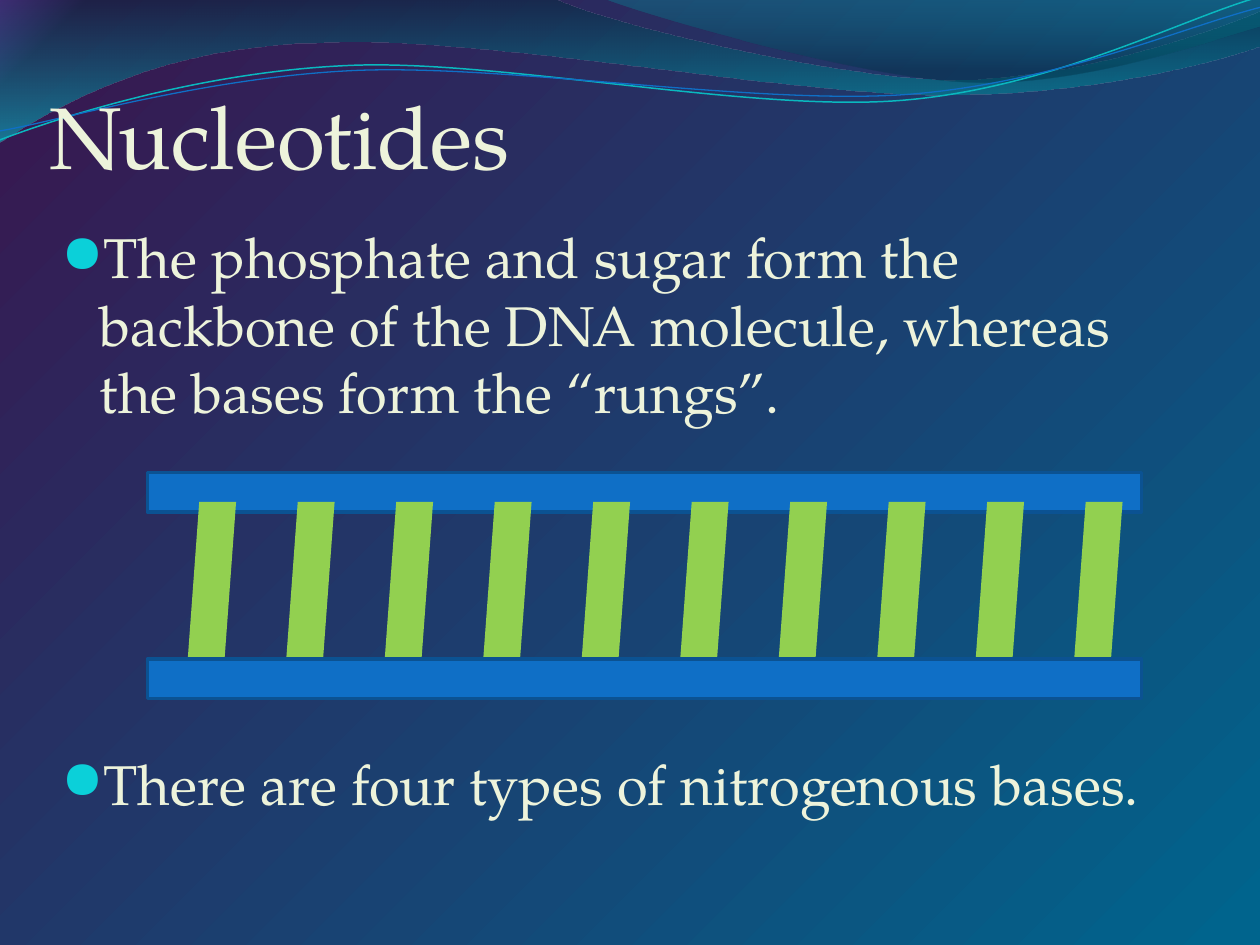
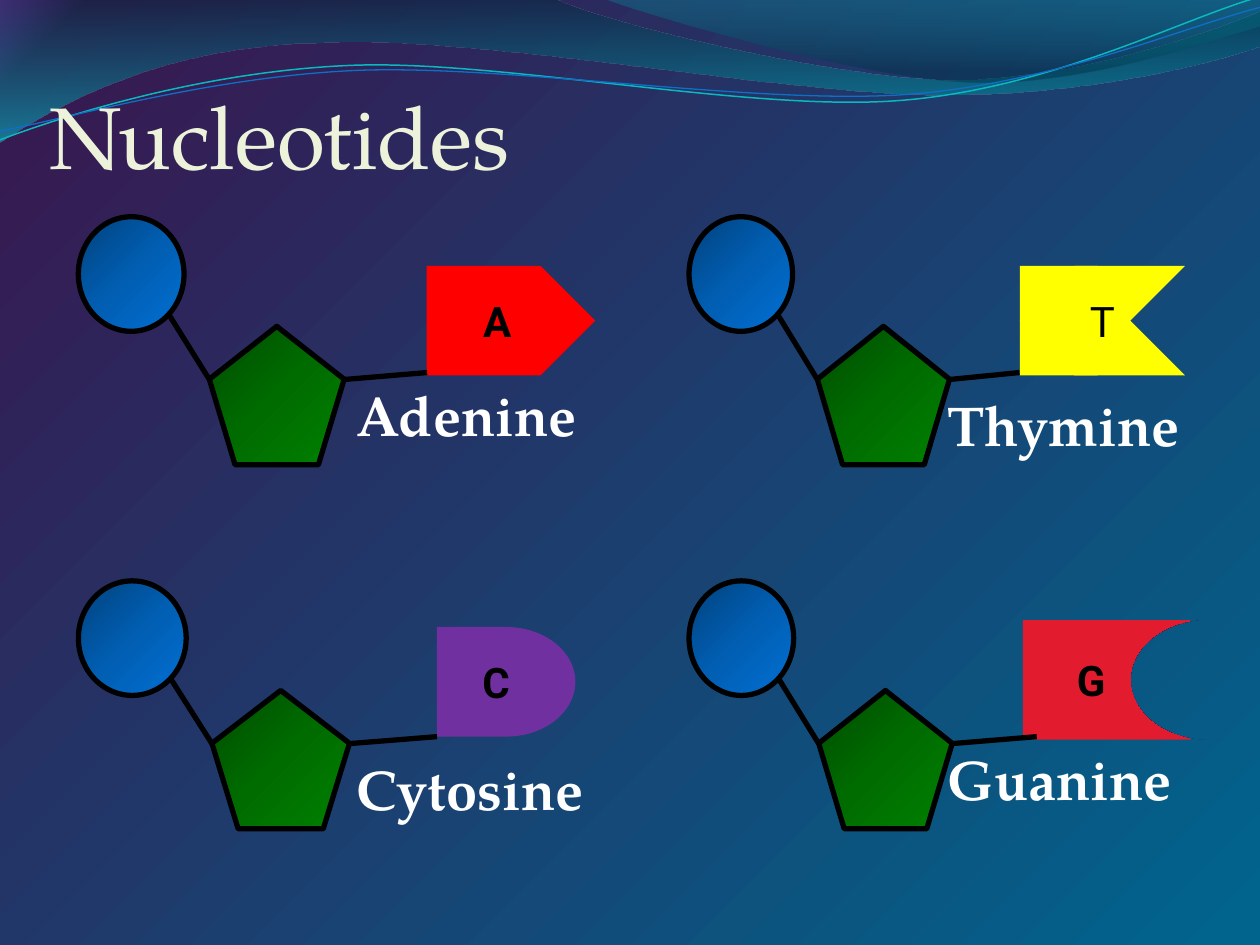
from dataclasses import dataclass

from lxml.etree import SubElement
from pptx import Presentation
from pptx.dml.color import RGBColor
from pptx.enum.shapes import MSO_CONNECTOR as Connector, MSO_SHAPE as Preset
from pptx.enum.text import MSO_ANCHOR as Anchor, PP_ALIGN as Align
from pptx.oxml.ns import qn
from pptx.util import Cm, Pt


@dataclass(frozen=True)
class Theme:
    serif: str = "TeX Gyre Pagella"
    sans: str = "Roboto"
    symbol: str = "OpenSymbol"
    title_size: int = 50
    text_size: int = 32
    letter_size: int = 24
    outline: int = 3
    cream: str = "EDF3DB"
    white: str = "FFFFFF"
    black: str = "000000"
    bullet: str = "0BD0D9"
    rail: str = "0F6FC6"
    rail_edge: str = "0B5292"
    rung: str = "92D050"
    background: tuple = ((0, "7030A0"), (4, "381850"), (99, "00648D"))
    phosphate: tuple = ((0, "01427D"), (50, "015EB2"), (100, "0170D4"))
    sugar: tuple = ((0, "004C00"), (50, "006C00"), (100, "008000"))


THEME = Theme()

TITLE = "Nucleotides"
TITLE_BOX = (0.99, 0.6, 22.86, 3.18)
BODY_BOX = (0.99, 4.37, 23.42, 13.69)
BODY = [
    ("The phosphate and sugar form the backbone of the DNA molecule, "
     "whereas the bases form the “rungs”.", 6.4),
    ("There are four types of nitrogenous bases.", 185.8),
]

BANDS = [
    ((0, -0.03),
     [(11.18, -0.03), (12.09, 0.43, 16.87, 1.6, 19.25, 1.6),
      (21.67, 1.6, 24.33, 0.66, 25.4, 0.23), (25.43, 0.91),
      (24.97, 1.12, 22.1, 1.93, 18.95, 1.91),
      (15.8, 1.91, 9.7, 0.71, 6.53, 0.86),
      (3.28, 0.89, 1.17, 2.11, -0.03, 2.87)],
     [(0, "002B3C", 45), (100, "00C6CF", 55)]),
    ((12.17, -0.03),
     [(12.93, 0.28, 17.32, 1.57, 19.53, 1.65),
      (21.74, 1.75, 24.41, 0.81, 25.4, 0.53), (25.4, 0)],
     [(0, "00A1A9", 30), (80, "003347", 45)]),
]
STRANDS = [
    ((0, 2.82),
     [(1.22, 2.36, 4.01, 1.45, 7.04, 1.32),
      (10.03, 1.19, 15.06, 2.26, 18.11, 2.03),
      (21.16, 1.8, 23.83, 0.38, 25.35, -0.05)], "0AB8BF", 0.85),
    ((0, 2.64),
     [(1.19, 2.44, 4.17, 1.55, 7.19, 1.42),
      (10.24, 1.3, 15.16, 2.11, 18.21, 1.91),
      (21.23, 1.7, 23.9, 0.53, 25.4, 0.15)], "0F6FC6", 0.75),
]

RAIL_LEFT, RAIL_WIDTH, RAIL_HEIGHT = 2.97, 20.04, 0.79
RAIL_TOPS = (9.53, 13.29)
RUNG_BOX = (3.77, 10.12, 0.99, 3.38)
RUNG_COUNT, RUNG_SPAN = 10, 17.87

COLUMNS, ROWS = (1.58, 13.89), (4.37, 11.71)
LABEL_LEFTS = (6.93, 18.85)
NUCLEOTIDES = [
    dict(name="Adenine", column=0, row=0, stretch=1, bond_end=8.61, label_top=7.54,
         preset=Preset.PENTAGON, base=(8.6, 5.36, 3.4, 2.21), color="FF0000"),
    dict(name="Thymine", column=1, row=0, stretch=0.98, bond_end=20.55, label_top=7.75,
         preset=Preset.CHEVRON, base=(20.56, 5.36, 3.33, 2.21), color="FFFF00",
         backing=(20.56, 5.36, 1.57, 2.21), bold=False),
    dict(name="Cytosine", column=0, row=1, stretch=1.02, bond_end=8.81, label_top=15.09,
         preset=Preset.FLOWCHART_DELAY, base=(8.81, 12.64, 2.79, 2.21), color="7030A0"),
    dict(name="Guanine", column=1, row=1, stretch=0.99, bond_end=20.9, label_top=14.88,
         preset=Preset.RECTANGLE, base=(20.62, 12.5, 3.38, 2.41), color="E31B2E",
         cutout=(22.81, 12.5, 3.18, 2.41), margin_right=0.88),
]


def assign(target, **values):
    for name, value in values.items():
        setattr(target, name, value)


def lengths(values):
    return [Cm(value) for value in values]


def fill_gradient(fill, element, stops, angle):
    fill.gradient()
    gradient = element.find(".//" + qn("a:gradFill"))
    gradient.find(qn("a:lin")).set("ang", str(angle * 60000))
    stop_list = gradient.find(qn("a:gsLst"))
    stop_list.clear()
    for position, color, *opacity in stops:
        stop = SubElement(stop_list, qn("a:gs"), pos=str(position * 1000))
        tint = SubElement(stop, qn("a:srgbClr"), val=color)
        for percent in opacity:
            SubElement(tint, qn("a:alpha"), val=str(percent * 1000))


def paint(shape, fill=None, line=None, width=0, angle=45):
    shape.shadow.inherit = False
    if fill is None:
        shape.fill.background()
    elif isinstance(fill, str):
        shape.fill.solid()
        shape.fill.fore_color.rgb = RGBColor.from_string(fill)
    else:
        fill_gradient(shape.fill, shape.element, fill, angle)
    if line:
        shape.line.color.rgb = RGBColor.from_string(line)
        shape.line.width = Pt(width)
    else:
        shape.line.fill.background()


def add_preset(slide, preset, box, **style):
    shape = slide.shapes.add_shape(preset, *lengths(box))
    paint(shape, **style)
    return shape


def mirror(shape):
    shape.element.spPr.find(qn("a:xfrm")).set("flipH", "1")


def add_curve(slide, start, segments, close=True, **style):
    points = [lengths(segment[index:index + 2])
              for segment in segments for index in range(0, len(segment), 2)]
    builder = slide.shapes.build_freeform(*lengths(start))
    builder.add_line_segments(points, close=close)
    shape = builder.convert_to_shape()
    lines = iter(list(shape.element.iter(qn("a:lnTo"))))
    for segment in segments:
        first, *others = [next(lines) for _ in range(len(segment) // 2)]
        if others:
            curve = first.makeelement(qn("a:cubicBezTo"))
            first.addprevious(curve)
            for step in (first, *others):
                curve.append(step[0])
                step.getparent().remove(step)
    paint(shape, **style)


def write(paragraph, text, size, color, font=THEME.serif, bold=False):
    run = paragraph.add_run()
    run.text = text
    assign(run.font, name=font, size=Pt(size), bold=bold)
    run.font.color.rgb = RGBColor.from_string(color)


def add_text_frame(slide, box, **values):
    frame = slide.shapes.add_textbox(*lengths(box)).text_frame
    assign(frame, word_wrap=True, **values)
    return frame


def add_bullet(paragraph):
    properties = paragraph._p.get_or_add_pPr()
    properties.set("marL", str(Cm(0.76)))
    properties.set("indent", str(-Cm(0.76)))
    color = SubElement(properties, qn("a:buClr"))
    SubElement(color, qn("a:srgbClr"), val=THEME.bullet)
    SubElement(properties, qn("a:buSzPct"), val="95000")
    SubElement(properties, qn("a:buFont"), typeface=THEME.symbol)
    SubElement(properties, qn("a:buChar"), char="●")


def add_bond(slide, start, end):
    bond = slide.shapes.add_connector(Connector.STRAIGHT, *lengths((*start, *end)))
    bond.line.color.rgb = RGBColor.from_string(THEME.black)
    bond.line.width = Pt(THEME.outline)
    SubElement(bond.element.spPr, qn("a:effectLst"))


def add_titled_slide(presentation):
    slide = presentation.slides.add_slide(presentation.slide_layouts[6])
    fill_gradient(slide.background.fill, slide.element, THEME.background, 45)
    for start, segments, stops in BANDS:
        add_curve(slide, start, segments, fill=stops, angle=90)
    for start, segments, color, width in STRANDS:
        add_curve(slide, start, segments, close=False, line=color, width=width)
    frame = add_text_frame(slide, TITLE_BOX, vertical_anchor=Anchor.BOTTOM,
                           margin_left=0, margin_right=0, margin_top=Cm(0.13),
                           margin_bottom=0)
    write(frame.paragraphs[0], TITLE, THEME.title_size, THEME.cream)
    return slide


def add_ladder(slide):
    def add_rail(top):
        add_preset(slide, Preset.RECTANGLE, (RAIL_LEFT, top, RAIL_WIDTH, RAIL_HEIGHT),
                   fill=THEME.rail, line=THEME.rail_edge, width=2)

    upper, lower = RAIL_TOPS
    left, *rest = RUNG_BOX
    step = RUNG_SPAN / (RUNG_COUNT - 1)
    add_rail(upper)
    for index in range(RUNG_COUNT):
        add_preset(slide, Preset.PARALLELOGRAM, (left + index * step, *rest),
                   fill=THEME.rung)
    add_rail(lower)


def add_backbone_slide(presentation):
    slide = add_titled_slide(presentation)
    frame = add_text_frame(slide, BODY_BOX)
    for index, (text, space) in enumerate(BODY):
        paragraph = frame.add_paragraph() if index else frame.paragraphs[0]
        paragraph.space_before = Pt(space)
        add_bullet(paragraph)
        write(paragraph, text, THEME.text_size, THEME.cream)
    add_ladder(slide)


def add_base(slide, letter, preset, box, color, backing, bold, margin_right):
    if backing:
        add_preset(slide, Preset.RECTANGLE, backing, fill=color)
    base = add_preset(slide, preset, box, fill=color)
    if preset == Preset.CHEVRON:
        mirror(base)
    assign(base.text_frame, vertical_anchor=Anchor.MIDDLE, margin_right=Cm(margin_right))
    paragraph = base.text_frame.paragraphs[0]
    paragraph.alignment = Align.CENTER
    write(paragraph, letter, THEME.letter_size, THEME.black, THEME.sans, bold)


def add_cutout(slide, box):
    cutout = add_preset(slide, Preset.FLOWCHART_DELAY, box)
    mirror(cutout)
    element = cutout.element
    element.set("useBgFill", "1")
    element.spPr.remove(element.spPr.find(qn("a:noFill")))
    element.remove(element.find(qn("p:style")))


def add_nucleotide(slide, name, column, row, stretch, bond_end, label_top, preset,
                   base, color, backing=None, cutout=None, bold=True, margin_right=0.25):
    def place(x, y):
        return COLUMNS[column] + x * stretch, ROWS[row] + y

    edge = dict(line=THEME.black, width=THEME.outline)
    add_base(slide, name[0], preset, base, color, backing, bold, margin_right)
    add_preset(slide, Preset.OVAL, (*place(0, 0), 2.13 * stretch, 2.31),
               fill=THEME.phosphate, **edge)
    add_preset(slide, Preset.REGULAR_PENTAGON, (*place(2.64, 2.21), 2.72 * stretch, 2.79),
               fill=THEME.sugar, **edge)
    add_bond(slide, place(2.64, 3.28), place(1.83, 1.98))
    add_bond(slide, place(5.36, 3.28), (bond_end, ROWS[row] + 3.14))
    if cutout:
        add_cutout(slide, cutout)
    frame = add_text_frame(slide, (LABEL_LEFTS[column], label_top, 6.55, 1.63))
    write(frame.paragraphs[0], name, THEME.text_size, THEME.white, bold=True)


def add_bases_slide(presentation):
    slide = add_titled_slide(presentation)
    for nucleotide in NUCLEOTIDES:
        add_nucleotide(slide, **nucleotide)


def main():
    presentation = Presentation()
    assign(presentation, slide_width=Cm(25.4), slide_height=Cm(19.05))
    add_backbone_slide(presentation)
    add_bases_slide(presentation)
    presentation.save("out.pptx")


if __name__ == "__main__":
    main()
